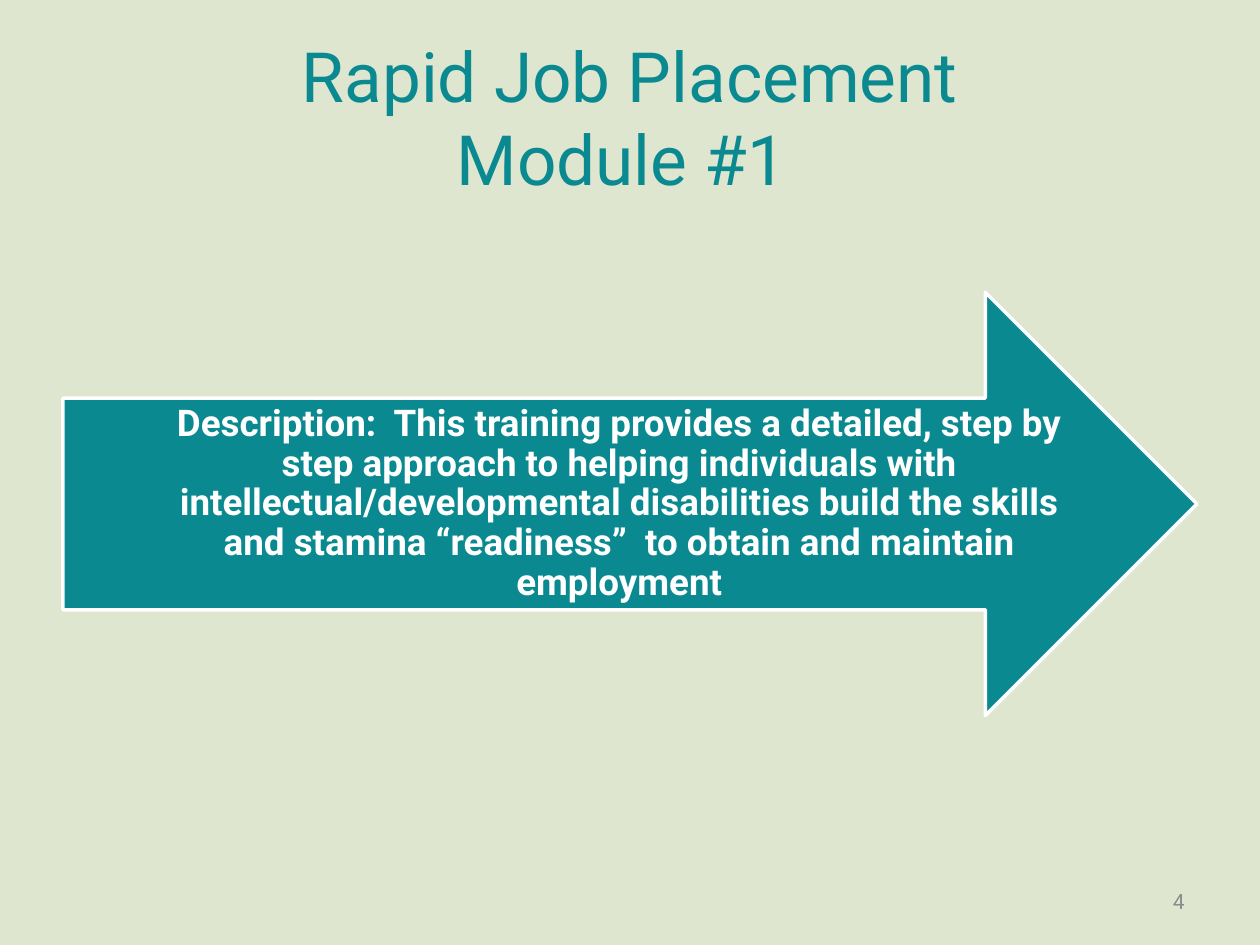
from dataclasses import dataclass

from pptx import Presentation
from pptx.dml.color import RGBColor
from pptx.enum.shapes import MSO_SHAPE as Shape
from pptx.enum.text import MSO_ANCHOR as Anchor, PP_ALIGN as Align
from pptx.slide import Slide
from pptx.util import Inches, Pt

SAGE = RGBColor(0xDF, 0xE6, 0xD0)
TEAL = RGBColor(0x0A, 0x8A, 0x90)
WHITE = RGBColor(0xFF, 0xFF, 0xFF)
GREY = RGBColor(0x8C, 0x8C, 0x8C)

WIDTH, HEIGHT = 10, 7.5
MARGIN = WIDTH / 20
CONTENT_WIDTH = WIDTH - 2 * MARGIN
ARROW_TOP, ARROW_HEIGHT = 2.32, 3.36
NUMBER_WIDTH = 2.33


@dataclass(frozen=True)
class Area:
    left: float
    top: float
    width: float
    height: float

    def lengths(self) -> list[Inches]:
        return [Inches(n) for n in (self.left, self.top, self.width, self.height)]


@dataclass(frozen=True)
class Label:
    text: str
    area: Area
    size: float
    color: RGBColor
    align: Align = Align.CENTER
    bold: bool = False
    line_spacing: float = 1.0
    side_inset: float = 0.1
    end_inset: float = 0.05


LABELS = [
    Label("Rapid Job Placement\vModule #1 ",
          Area(MARGIN, 0.3, CONTENT_WIDTH, 1.25), 39.6, TEAL),
    # The arrow's shaft is the middle half of its height.
    Label("Description:  This training provides a detailed, step by step approach "
          "to helping individuals with intellectual/developmental disabilities "
          "build the skills and stamina “readiness”  to obtain and maintain "
          "employment",
          Area(1.23, ARROW_TOP + ARROW_HEIGHT / 4, 7.37, ARROW_HEIGHT / 2),
          21, WHITE, bold=True, line_spacing=0.9, side_inset=0, end_inset=0),
    Label("4", Area(WIDTH - MARGIN - NUMBER_WIDTH, 6.95, NUMBER_WIDTH, 0.4),
          12, GREY, align=Align.RIGHT),
]


def draw_arrow(page: Slide) -> None:
    area = Area(MARGIN, ARROW_TOP, CONTENT_WIDTH, ARROW_HEIGHT)
    arrow = page.shapes.add_shape(Shape.RIGHT_ARROW, *area.lengths())
    arrow.shadow.inherit = False
    arrow.fill.solid()
    arrow.fill.fore_color.rgb = TEAL
    arrow.line.color.rgb = WHITE
    arrow.line.width = Pt(2)


def draw_label(page: Slide, label: Label) -> None:
    frame = page.shapes.add_textbox(*label.area.lengths()).text_frame
    side, end = Inches(label.side_inset), Inches(label.end_inset)
    frame_format = {
        "word_wrap": True, "vertical_anchor": Anchor.MIDDLE,
        "margin_left": side, "margin_right": side,
        "margin_top": end, "margin_bottom": end,
    }
    for name, value in frame_format.items():
        setattr(frame, name, value)
    para = frame.paragraphs[0]
    para.text = label.text
    para.alignment = label.align
    para.line_spacing = label.line_spacing
    font_format = {"name": "Roboto", "size": Pt(label.size), "bold": label.bold}
    for span in para.runs:
        for name, value in font_format.items():
            setattr(span.font, name, value)
        span.font.color.rgb = label.color


def main() -> None:
    deck = Presentation()
    deck.slide_width, deck.slide_height = Inches(WIDTH), Inches(HEIGHT)
    page = deck.slides.add_slide(deck.slide_layouts[6])
    page.background.fill.solid()
    page.background.fill.fore_color.rgb = SAGE
    draw_arrow(page)
    for label in LABELS:
        draw_label(page, label)
    deck.save("out.pptx")


if __name__ == "__main__":
    main()
